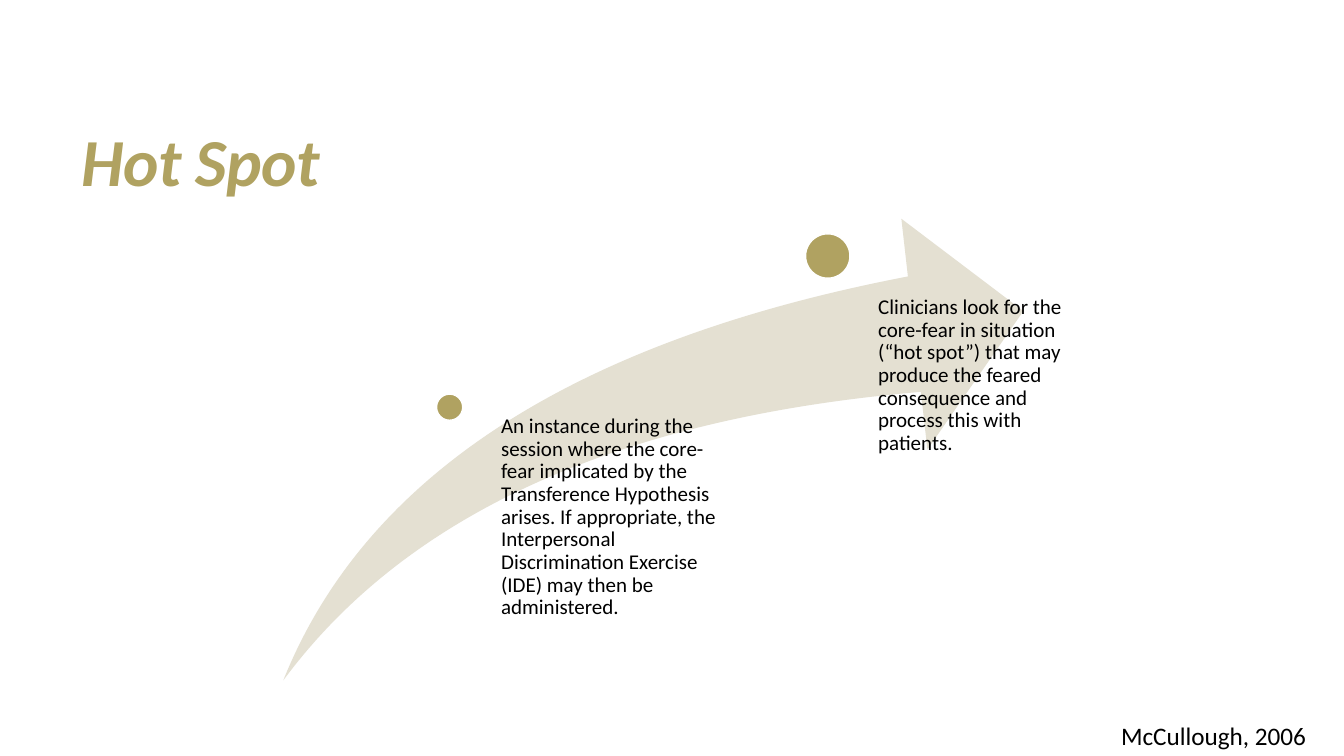
import pptx
import pptx.dml.color
import pptx.enum.shapes
import pptx.enum.text
import pptx.util
from pptx.util import Inches

SHAPE = pptx.enum.shapes.MSO_SHAPE
ANCHOR = pptx.enum.text.MSO_ANCHOR
GOLD, SAND, WHITE, BLACK = "B0A261", "E4E0D2", "FFFFFF", "000000"


def rgb(value):
    return pptx.dml.color.RGBColor.from_string(value)


def write(box, text, size, color=BLACK, bold=False, italic=False, tracking=None,
          line_spacing=0.9, anchor=ANCHOR.TOP, wrap=True, insets=(0.1, 0.05, 0.1, 0.05)):
    """Fill a text frame with one left-aligned paragraph; tracking is in points."""
    frame = box.text_frame
    frame.auto_size = pptx.enum.text.MSO_AUTO_SIZE.NONE
    frame.word_wrap = wrap
    frame.vertical_anchor = anchor
    (frame.margin_left, frame.margin_top,
     frame.margin_right, frame.margin_bottom) = map(Inches, insets)
    paragraph = frame.paragraphs[0]
    paragraph.alignment = pptx.enum.text.PP_ALIGN.LEFT
    paragraph.line_spacing = line_spacing
    run = paragraph.add_run()
    run.text = text
    run.font.name = "Calibri"
    run.font.size = pptx.util.Pt(size)
    run.font.bold = bold
    run.font.italic = italic
    run.font.color.rgb = rgb(color)
    if tracking is not None:
        run.font._element.set("spc", str(round(tracking * 100)))


deck = pptx.Presentation()
deck.slide_width, deck.slide_height = Inches(13.33), Inches(7.5)
slide = deck.slides.add_slide(deck.slide_layouts[5])

title = slide.shapes.title
title.left, title.top = Inches(0.71), Inches(0.4)
title.width, title.height = Inches(11.54), Inches(1.64)
write(title, "Hot Spot", 48, color=GOLD, bold=True, italic=True, tracking=-0.4,
      anchor=ANCHOR.BOTTOM)

swoosh = slide.shapes.add_shape(
    SHAPE.SWOOSH_ARROW, Inches(2.81), Inches(2.17), Inches(7.34), Inches(4.58))
swoosh.adjustments[0] = swoosh.adjustments[1] = 0.25
swoosh.shadow.inherit = False
swoosh.fill.solid()
swoosh.fill.fore_color.rgb = rgb(SAND)
swoosh.line.fill.background()

# Dot left, top and diameter; text left, top, height and left inset; text
steps = [
    (4.33, 3.91, 0.26, 4.83, 4.12, 1.96, 0.14,
     "An instance during the session where the core-fear implicated by the "
     "Transference Hypothesis arises. If appropriate, the Interpersonal "
     "Discrimination Exercise (IDE) may then be administered."),
    (7.99, 2.32, 0.44, 8.48, 2.94, 3.04, 0.23,
     "Clinicians look for the core-fear in situation (“hot spot”) that may "
     "produce the feared consequence and process this with patients."),
]
for dot_left, dot_top, diameter, left, top, height, inset, text in steps:
    dot = slide.shapes.add_shape(SHAPE.OVAL, Inches(dot_left), Inches(dot_top),
                                 Inches(diameter), Inches(diameter))
    dot.shadow.inherit = False
    dot.fill.solid()
    dot.fill.fore_color.rgb = rgb(GOLD)
    dot.line.color.rgb = rgb(WHITE)
    dot.line.width = pptx.util.Pt(1)
    step = slide.shapes.add_textbox(Inches(left), Inches(top), Inches(2.38), Inches(height))
    write(step, text, 15, insets=(inset, 0, 0, 0))

citation = slide.shapes.add_textbox(Inches(11.02), Inches(7.1), Inches(2.31), Inches(0.4))
write(citation, "McCullough, 2006", 18, line_spacing=1.0, wrap=False)

deck.save("out.pptx")
